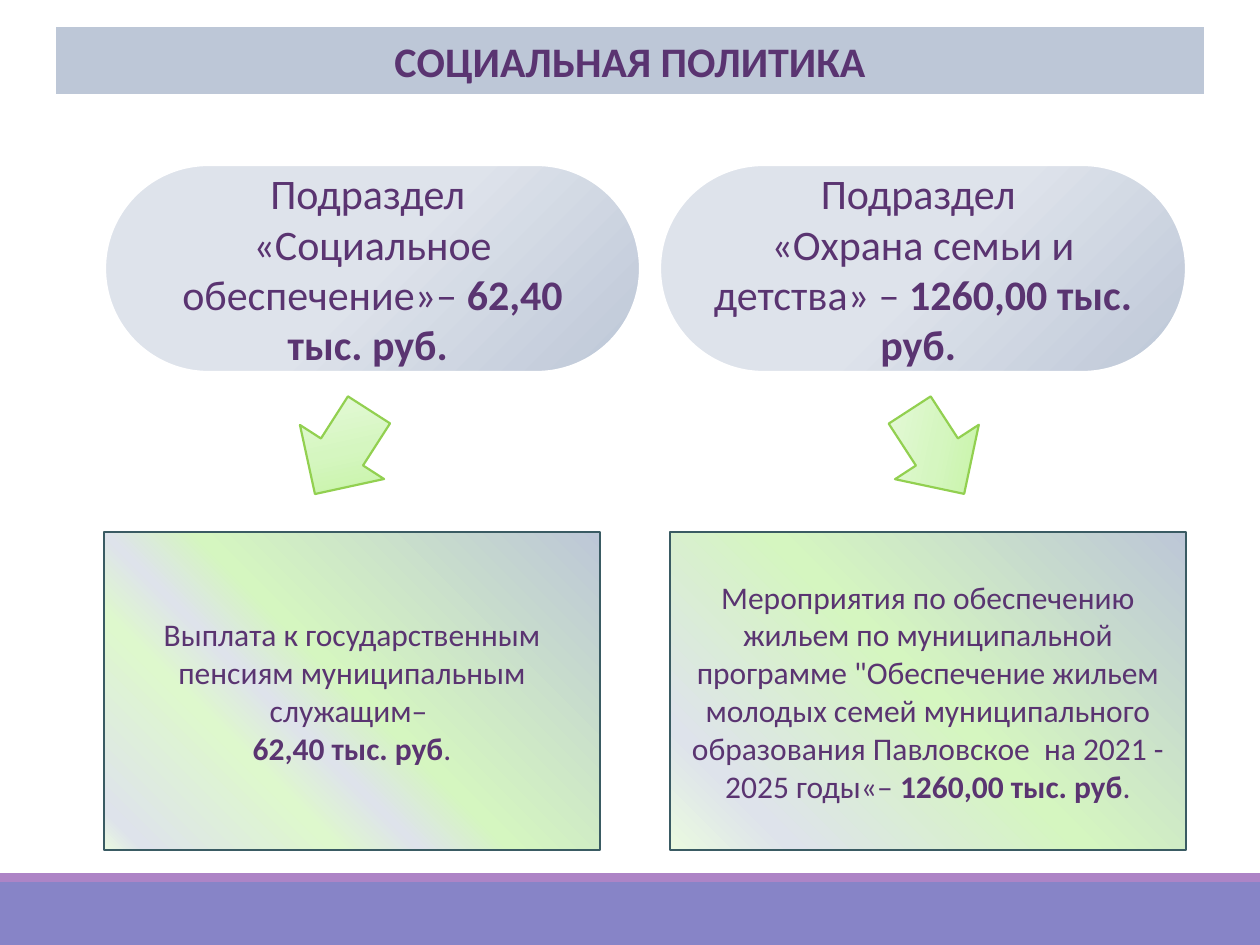
from lxml import etree
from pptx import Presentation
from pptx import util as u
from pptx.dml.color import RGBColor
from pptx.enum import shapes, text
from pptx.oxml.ns import qn

PX = 914400 / 126
SHAPE = shapes.MSO_SHAPE
COLORS = {
    "footer": "8784C7", "stripe": "AD84C6", "title": "BDC7D7", "text": "5A3471",
    "white": "FFFFFF", "arrow": "92D050", "card": "3A5B63",
}
PILL = [(0, "BDC7D7"), (50, "DEE3EB"), (91, "DEE3EB"), (100, "DFF3E3")]
ARROW = [(0, "BEF297"), (50, "D5F6C0"), (100, "EAFAE0")]
CARD_LEFT = [(0, "BDC7D7"), (50, "D5F6C0"), (61, "DEE3EB"),
             (71, "DEF8CD"), (95, "DEE3EB"), (100, "EAFAE0")]
CARD_RIGHT = [(0, "BDC7D7"), (50, "D5F6C0"), (85, "DEE3EB"), (100, "EAFAE0")]


def emu(*lengths):
    return [u.Emu(round(n * PX)) for n in lengths]


def rgb(name):
    return RGBColor.from_string(COLORS[name])


def set_attrs(obj, values):
    for name, value in values.items():
        setattr(obj, name, value)


def fill_solid(sp, name):
    sp.fill.solid()
    sp.fill.fore_color.rgb = rgb(name)


def fill_gradient(sp, stops, angle=None):
    sp.fill.background()
    old = sp._element.spPr.find(qn("a:noFill"))
    grad = etree.Element(qn("a:gradFill"), rotWithShape="1")
    gs_list = etree.SubElement(grad, qn("a:gsLst"))
    for pos, color in stops:
        gs = etree.SubElement(gs_list, qn("a:gs"), pos=str(pos * 1000))
        etree.SubElement(gs, qn("a:srgbClr"), val=color)
    if angle is None:
        way = etree.SubElement(grad, qn("a:path"))
        way.set("path", "circle")
        etree.SubElement(way, qn("a:fillToRect"), l="100000", t="100000")
    else:
        etree.SubElement(grad, qn("a:lin"), ang=str(angle * 60000), scaled="0")
    old.getparent().replace(old, grad)


def outline(sp, name):
    sp.line.color.rgb = rgb(name)
    sp.line.width = u.Pt(1.25)


def add_shape(s, kind, box):
    sp = s.shapes.add_shape(kind, *emu(*box))
    sp.shadow.inherit = False
    return sp


def write(sp, paragraphs, size):
    tf = sp.text_frame
    set_attrs(tf, {"word_wrap": True, "vertical_anchor": text.MSO_ANCHOR.MIDDLE,
                   "auto_size": text.MSO_AUTO_SIZE.NONE})
    for i, runs in enumerate(paragraphs):
        p = tf.add_paragraph() if i else tf.paragraphs[0]
        p.alignment = text.PP_ALIGN.CENTER
        for words, bold in runs:
            r = p.add_run()
            r.text = words
            set_attrs(r.font, {"name": "Calibri", "size": u.Pt(size), "bold": bold})
            r.font.color.rgb = rgb("text")


def add_title(s, box, words):
    sp = s.shapes.title
    set_attrs(sp, dict(zip(("left", "top", "width", "height"), emu(*box))))
    geom = etree.Element(qn("a:prstGeom"), prst="roundRect")
    guides = etree.SubElement(geom, qn("a:avLst"))
    etree.SubElement(guides, qn("a:gd"), name="adj", fmla="val 50000")
    sp._element.spPr.find(qn("a:xfrm")).addnext(geom)
    fill_solid(sp, "title")
    outline(sp, "white")
    write(sp, [[(words, True)]], 24)


def add_footer(s, box):
    x, y, w, h = box
    stripe = 9
    for name, top, height in (("footer", y + stripe, h - stripe), ("stripe", y, stripe)):
        sp = add_shape(s, SHAPE.RECTANGLE, (x, top, w, height))
        fill_solid(sp, name)
        sp.line.fill.background()


def add_pill(s, box, paragraphs):
    sp = add_shape(s, SHAPE.ROUNDED_RECTANGLE, box)
    sp.adjustments[0] = 0.5
    fill_gradient(sp, PILL)
    outline(sp, "white")
    write(sp, paragraphs, 24)


def add_arrow(s, box, rotation):
    sp = add_shape(s, SHAPE.DOWN_ARROW, box)
    sp.rotation = rotation
    fill_gradient(sp, ARROW, 225)
    outline(sp, "arrow")


def add_card(s, box, stops, paragraphs):
    sp = add_shape(s, SHAPE.RECTANGLE, box)
    fill_gradient(sp, stops, 135)
    outline(sp, "card")
    write(sp, paragraphs, 18)


def add_branch(s, top, pill, arrow, card):
    (pill_x, pill_w, pill_text) = pill
    (arrow_x, rotation) = arrow
    (card_x, card_w, stops, card_text) = card
    add_pill(s, (pill_x, top, pill_w, 207), pill_text)
    add_arrow(s, (arrow_x, top + 237, 100, 100), rotation)
    add_card(s, (card_x, top + 367, card_w, 318), stops, card_text)


def main():
    prs = Presentation()
    prs.slide_width, prs.slide_height = emu(1260, 945)
    s = prs.slides.add_slide(prs.slide_layouts[5])
    add_footer(s, (0, 873, 1260, 72))
    add_title(s, (55, 26, 1150, 69), "СОЦИАЛЬНАЯ ПОЛИТИКА")
    add_branch(
        s, 165,
        (105, 535, [[("Подраздел ", False)],
                    [("«Социальное обеспечение»– ", False), ("62,40 тыс. руб. ", True)]]),
        (292, 32.7),
        (104, 496, CARD_LEFT,
         [[("Выплата к государственным пенсиям муниципальным служащим– ", False)],
          [("62,40 тыс. руб", True), (".", False)]]))
    add_branch(
        s, 165,
        (660, 526, [[("Подраздел ", False)],
                    [("«Охрана семьи и детства» – ", False), ("1260,00 тыс. руб. ", True)]]),
        (887, 327),
        (670, 516, CARD_RIGHT,
         [[("Мероприятия по обеспечению жильем по муниципальной программе "
            "\"Обеспечение жильем молодых семей муниципального образования "
            "Павловское  на 2021 - 2025 годы«– ", False),
           ("1260,00 тыс. руб", True), (".", False)]]))
    prs.save("out.pptx")


if __name__ == "__main__":
    main()
